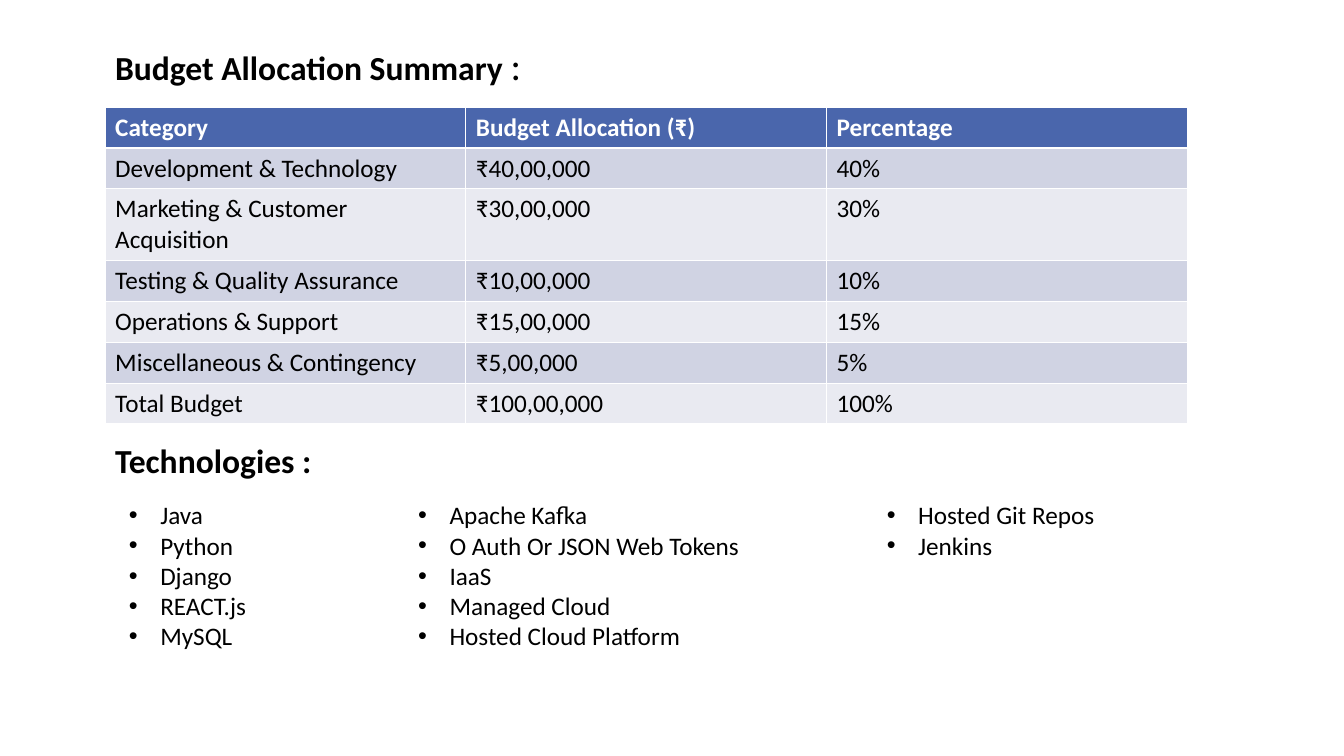
from dataclasses import dataclass

from lxml import etree
from pptx import Presentation
from pptx import util as u
from pptx.dml.color import RGBColor
from pptx.enum import text
from pptx.oxml.ns import qn


@dataclass(frozen=True)
class Theme:
    font: str = "Calibri"
    black: str = "000000"
    white: str = "FFFFFF"
    header: str = "4A66AC"
    bands: tuple = ("D0D3E3", "E9EAF1")
    body: int = 18
    heading: int = 24
    colon: int = 28


theme = Theme()


def style(span, size, color=theme.black, bold=False):
    span.font.name = theme.font
    span.font.size = u.Pt(size)
    span.font.bold = bold
    span.font.color.rgb = RGBColor.from_string(color)


def add_box(left, top, width, height, wrap=True):
    box = page.shapes.add_textbox(u.Cm(left), u.Cm(top), u.Cm(width), u.Cm(height))
    box.text_frame.word_wrap = wrap
    box.text_frame.auto_size = text.MSO_AUTO_SIZE.SHAPE_TO_FIT_TEXT
    return box.text_frame


deck = Presentation()
deck.slide_width, deck.slide_height = u.Cm(33.87), u.Cm(19.05)
page = deck.slides.add_slide(deck.slide_layouts[6])

# Budget table
budget = [
    ("Category", "Budget Allocation (₹)", "Percentage"),
    ("Development & Technology", "₹40,00,000", "40%"),
    ("Marketing & Customer Acquisition", "₹30,00,000", "30%"),
    ("Testing & Quality Assurance", "₹10,00,000", "10%"),
    ("Operations & Support", "₹15,00,000", "15%"),
    ("Miscellaneous & Contingency", "₹5,00,000", "5%"),
    ("Total Budget", "₹100,00,000", "100%"),
]
left, row_height, column_width = 2.65, 1.03, 9.09
table = page.shapes.add_table(
    len(budget), 3, u.Cm(left), u.Cm(2.7),
    u.Cm(3 * column_width), u.Cm(len(budget) * row_height),
).table
for column in table.columns:
    column.width = u.Cm(column_width)
for r, values in enumerate(budget):
    is_header = r == 0
    table.rows[r].height = u.Cm(row_height)
    fill = theme.header if is_header else theme.bands[(r - 1) % 2]
    for c, value in enumerate(values):
        cell = table.cell(r, c)
        cell.text_frame.text = value
        cell.fill.solid()
        cell.fill.fore_color.rgb = RGBColor.from_string(fill)
        if is_header:
            cell.vertical_anchor = text.MSO_ANCHOR.MIDDLE
        style(cell.text_frame.paragraphs[0].runs[0], theme.body,
              theme.white if is_header else theme.black, is_header)

# Headings
para = add_box(left, 0.92, 17.17, 1.45).paragraphs[0]
para.text = "Budget Allocation Summary "
style(para.runs[0], theme.heading, bold=True)
colon = para.add_run()
colon.text = ":"
style(colon, theme.colon)

para = add_box(left, 10.95, 5.51, 1.28, wrap=False).paragraphs[0]
para.text = "Technologies :"
style(para.runs[0], theme.heading, bold=True)

# Technology lists: left, width, height, wrap, items
technologies = [
    (3.0, 3.48, 4.88, False, ["Java", "Python", "Django", "REACT.js", "MySQL"]),
    (10.29, 9.07, 4.11, True, ["Apache Kafka", "O Auth Or JSON Web Tokens", "IaaS",
                               "Managed Cloud", "Hosted Cloud Platform"]),
    (22.1, 5.82, 1.8, True, ["Hosted Git Repos", "Jenkins"]),
]
indent = u.Cm(0.79)
for list_left, width, height, wrap, items in technologies:
    frame = add_box(list_left, 12.47, width, height, wrap)
    frame.text = "\n".join(items)
    for para in frame.paragraphs:
        properties = para._p.get_or_add_pPr()
        properties.set("marL", str(indent))
        properties.set("indent", str(-indent))
        etree.SubElement(properties, qn("a:buFont"), typeface="Arial")
        etree.SubElement(properties, qn("a:buChar"), char="•")
        style(para.runs[0], theme.body)

deck.save("out.pptx")
